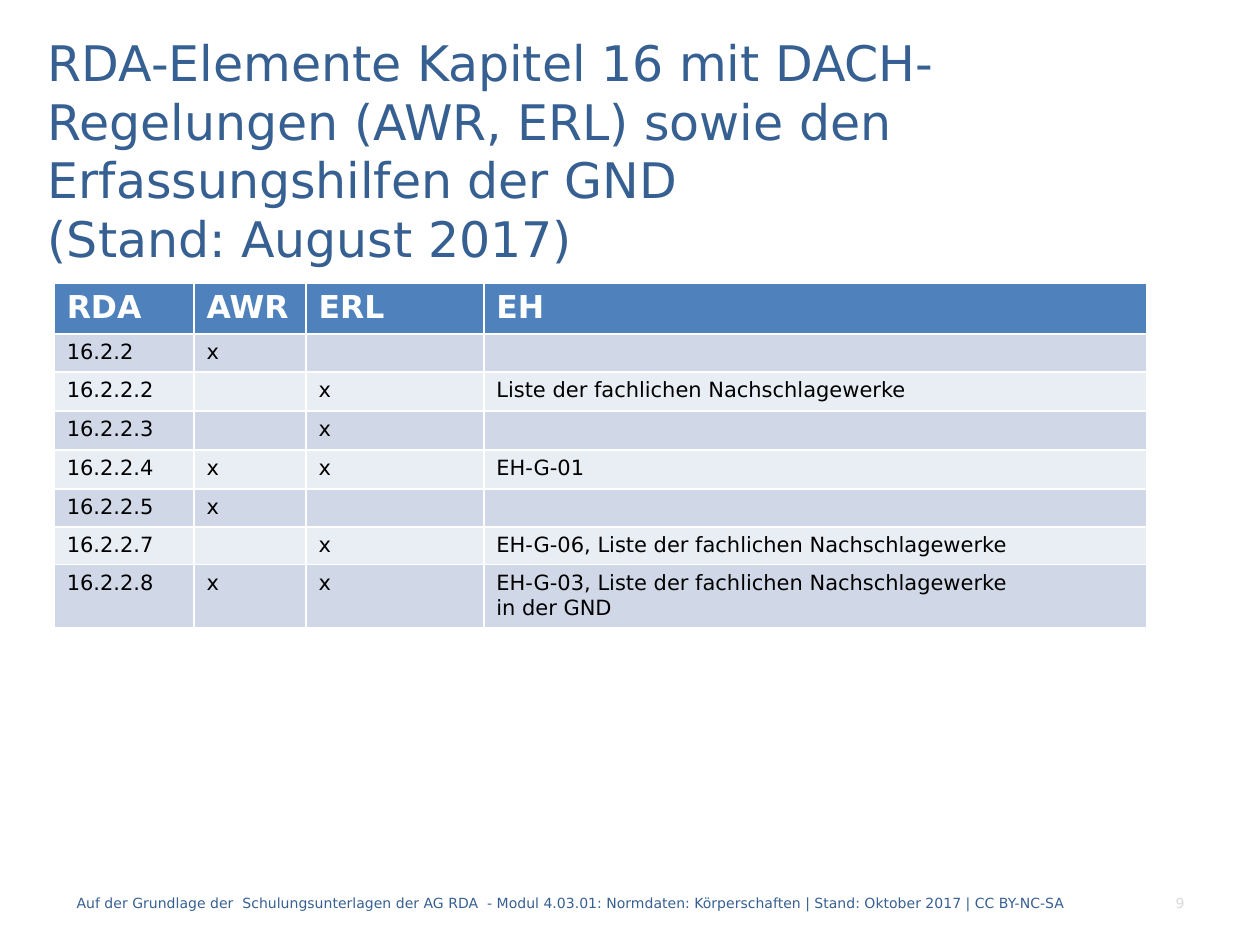
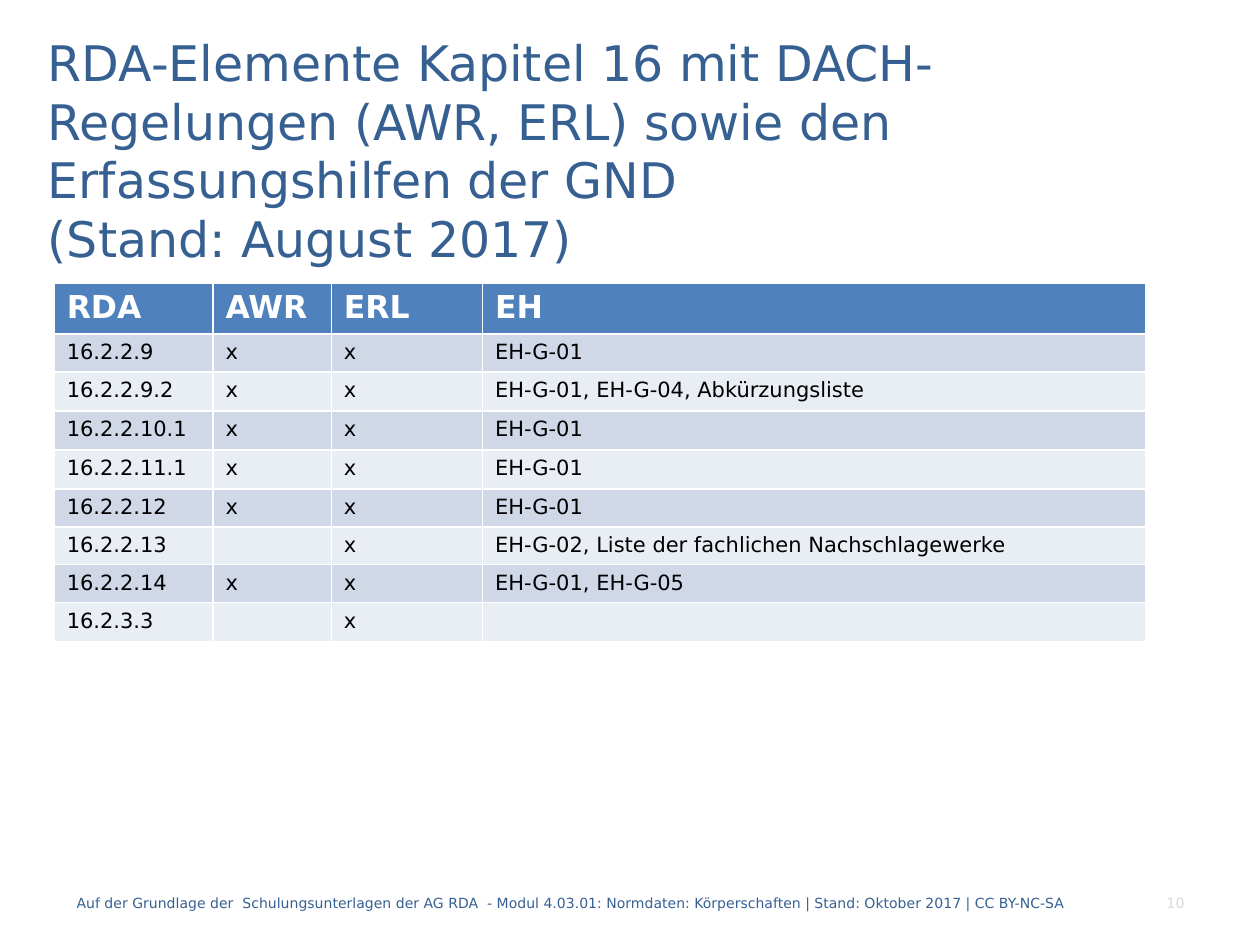
from pptx import Presentation
from pptx.dml.color import RGBColor
from pptx.enum.text import MSO_ANCHOR, MSO_AUTO_SIZE, PP_ALIGN
from pptx.util import Inches, Pt

MIDDLE = MSO_ANCHOR.MIDDLE
NO_FIT = MSO_AUTO_SIZE.NONE
LEFT, RIGHT = PP_ALIGN.LEFT, PP_ALIGN.RIGHT

FONT = "DejaVu Sans"
NAVY = RGBColor(0x37, 0x60, 0x92)
GREY = RGBColor(0xD9, 0xD9, 0xD9)
BLUE = RGBColor(0x4F, 0x81, 0xBD)
WHITE = RGBColor(0xFF, 0xFF, 0xFF)
BLACK = RGBColor(0, 0, 0)
BANDS = RGBColor(0xD0, 0xD8, 0xE8), RGBColor(0xE9, 0xED, 0xF4)

TITLE = ("RDA-Elemente Kapitel 16 mit DACH-Regelungen (AWR, ERL) sowie den "
         "Erfassungshilfen der GND \v(Stand: August 2017)")
FOOTER = ("Auf der Grundlage der  Schulungsunterlagen der AG RDA  - Modul 4.03.01: "
          "Normdaten: Körperschaften | Stand: Oktober 2017 | CC BY-NC-SA")
HEAD = ("RDA", "AWR", "ERL", "EH")
FIRST_PAGE = 9

TABLES = [
    {
        "cols": (1.11, 0.89, 1.41, 5.26),
        "heights": (0.38, 0.29, 0.31, 0.31, 0.31, 0.29, 0.29, 0.49),
        "rows": [
            ("16.2.2", "x", "", ""),
            ("16.2.2.2", "", "x", "Liste der fachlichen Nachschlagewerke"),
            ("16.2.2.3", "", "x", ""),
            ("16.2.2.4", "x", "x", "EH-G-01"),
            ("16.2.2.5", "x", "", ""),
            ("16.2.2.7", "", "x", "EH-G-06, Liste der fachlichen Nachschlagewerke"),
            ("16.2.2.8", "x", "x",
             "EH-G-03, Liste der fachlichen Nachschlagewerke\nin der GND"),
        ],
    },
    {
        "cols": (1.26, 0.94, 1.2, 5.26),
        "heights": (0.38, 0.29, 0.31, 0.31, 0.31, 0.29, 0.29, 0.3, 0.31),
        "rows": [
            ("16.2.2.9", "x", "x", "EH-G-01"),
            ("16.2.2.9.2", "x", "x", "EH-G-01, EH-G-04, Abkürzungsliste"),
            ("16.2.2.10.1", "x", "x", "EH-G-01"),
            ("16.2.2.11.1", "x", "x", "EH-G-01"),
            ("16.2.2.12", "x", "x", "EH-G-01"),
            ("16.2.2.13", "", "x", "EH-G-02, Liste der fachlichen Nachschlagewerke"),
            ("16.2.2.14", "x", "x", "EH-G-01, EH-G-05"),
            ("16.2.3.3", "", "x", ""),
        ],
    },
]


def write(frame, text, size, color, bold=False, align=LEFT):
    frame.text = text
    for para in frame.paragraphs:
        para.alignment = align
        font = para.font
        font.name, font.size, font.bold = FONT, Pt(size), bold
        font.color.rgb = color
        if not text:
            para._p.get_or_add_endParaRPr().set("sz", str(size * 100))


def place(shape, *box):
    shape.left, shape.top, shape.width, shape.height = map(Inches, box)


def add_title(slide):
    title = slide.shapes.title
    place(title, 0.28, 0.91, 9.45, 0.56)
    frame = title.text_frame
    write(frame, TITLE, 28, NAVY)
    frame.word_wrap, frame.auto_size = True, NO_FIT
    frame.vertical_anchor = MIDDLE


def add_note(slide, text, left, width, color, align=LEFT):
    box = slide.shapes.add_textbox(*map(Inches, (left, 6.97, width, 0.4)))
    frame = box.text_frame
    write(frame, text, 8, color, align=align)
    frame.word_wrap = True
    frame.vertical_anchor = MIDDLE


def add_grid(slide, data):
    rows = [HEAD] + data["rows"]
    cols, heights = data["cols"], data["heights"]
    box = map(Inches, (0.43, 2.25, sum(cols), sum(heights)))
    table = slide.shapes.add_table(len(rows), len(cols), *box).table
    for col, width in zip(table.columns, cols):
        col.width = Inches(width)
    for i, (row, height) in enumerate(zip(rows, heights)):
        table.rows[i].height = Inches(height)
        for j, text in enumerate(row):
            cell = table.cell(i, j)
            cell.fill.solid()
            cell.fill.fore_color.rgb = BANDS[(i - 1) % 2] if i else BLUE
            style = (12, BLACK) if i else (18, WHITE, True)
            write(cell.text_frame, text, *style)


def main():
    """Build the slides on RDA chapter 16 and save them."""
    deck = Presentation()
    deck.slide_width, deck.slide_height = Inches(10), Inches(7.5)
    for page, data in enumerate(TABLES, FIRST_PAGE):
        slide = deck.slides.add_slide(deck.slide_layouts[5])
        add_title(slide)
        add_note(slide, FOOTER, 0.51, 8.58, NAVY)
        add_note(slide, str(page), 7.91, 1.59, GREY, RIGHT)
        add_grid(slide, data)
    deck.save("out.pptx")


if __name__ == "__main__":
    main()
